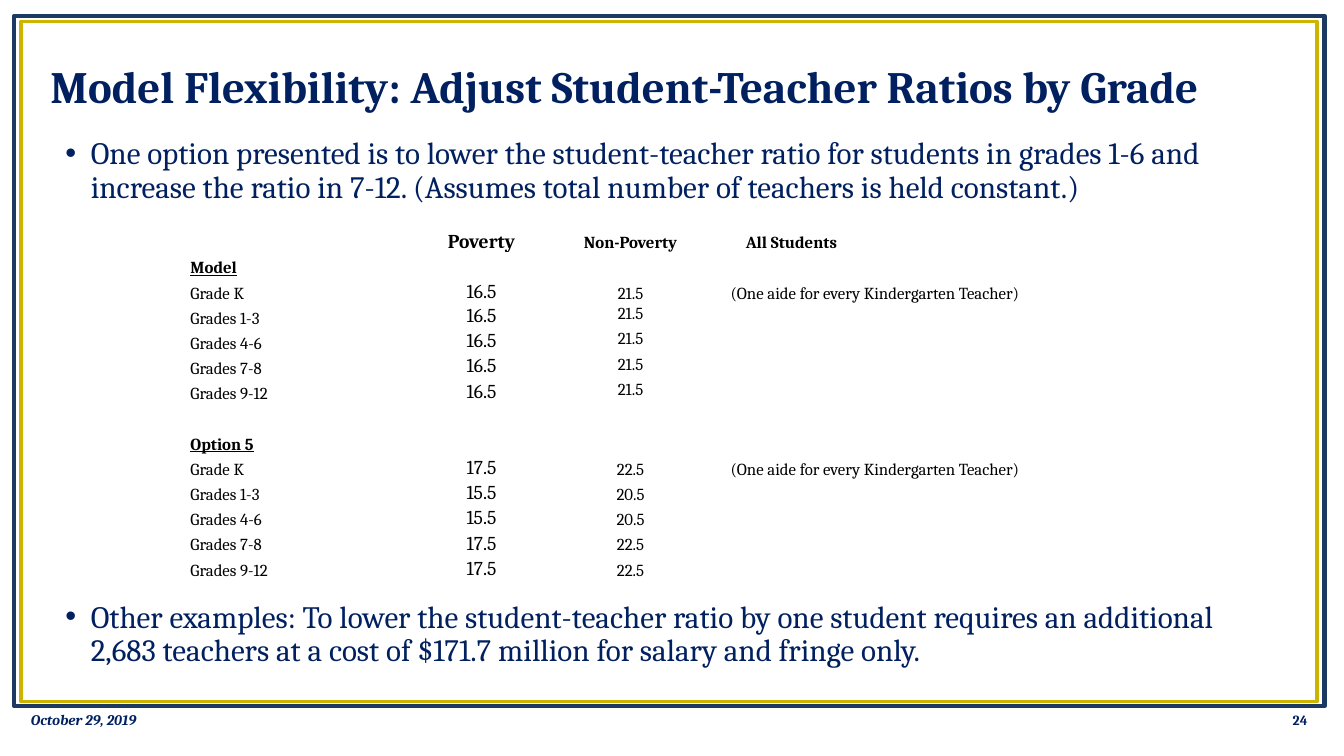
from dataclasses import dataclass

from lxml.etree import SubElement
from pptx import Presentation
from pptx.dml.color import RGBColor
from pptx.enum.shapes import MSO_SHAPE
from pptx.enum.text import MSO_ANCHOR, PP_ALIGN
from pptx.oxml.ns import qn
from pptx.util import Cm, Pt


@dataclass(frozen=True)
class Theme:
    font: str = "Cambria"
    navy: RGBColor = RGBColor(0x00, 0x20, 0x60)
    black: RGBColor = RGBColor(0x00, 0x00, 0x00)
    frame_blue: RGBColor = RGBColor(0x1C, 0x39, 0x61)
    frame_gold: RGBColor = RGBColor(0xCC, 0xB4, 0x00)
    title: float = 32
    body: float = 22.2
    poverty: float = 14
    cell: float = 12
    date: float = 10.5
    number: float = 10


def apply(target, values):
    for name, value in values.items():
        setattr(target, name, value)


class SlideBuilder:
    def __init__(self, page, theme):
        self.page = page
        self.theme = theme

    def add_span(self, para, text, size, color, layout=None, **style):
        apply(para, layout or {})
        span = para.add_run()
        span.text = text
        apply(span.font, {"name": self.theme.font, "size": Pt(size), **style})
        span.font.color.rgb = color

    def frame(self, left, top, width, height, color, weight):
        box = self.page.shapes.add_shape(
            MSO_SHAPE.RECTANGLE, Cm(left), Cm(top), Cm(width), Cm(height))
        box.shadow.inherit = False
        box.fill.background()
        box.line.color.rgb = color
        box.line.width = Pt(weight)

    def text_box(self, left, top, width, height, anchor=MSO_ANCHOR.MIDDLE):
        box = self.page.shapes.add_textbox(Cm(left), Cm(top), Cm(width), Cm(height))
        apply(box.text_frame, {"word_wrap": True, "vertical_anchor": anchor})
        return box.text_frame

    def line(self, area, text, size, layout=None, **style):
        self.add_span(self.text_box(*area).paragraphs[0], text, size,
                      self.theme.navy, layout, bold=True, **style)

    def bullets(self, area, texts, gap):
        frame = self.text_box(*area, anchor=MSO_ANCHOR.TOP)
        for index, text in enumerate(texts):
            para = frame.add_paragraph() if index else frame.paragraphs[0]
            settings = para._p.get_or_add_pPr()
            settings.set("marL", str(Cm(0.64)))
            settings.set("indent", str(-Cm(0.64)))
            SubElement(settings, qn("a:buFont"), typeface="Arial")
            SubElement(settings, qn("a:buChar"), char="•")
            layout = {"line_spacing": 0.9, "space_before": Pt(gap if index else 0)}
            self.add_span(para, text, self.theme.body, self.theme.navy, layout)

    def table(self, area, widths, rows, merged, top_cells):
        left, top, width, height = map(Cm, area)
        grid = self.page.shapes.add_table(
            len(rows), len(widths), left, top, width, height).table
        apply(grid, {"first_row": False, "horz_banding": False})
        for column, column_width in zip(grid.columns, widths):
            column.width = Cm(column_width)
        for r, row in enumerate(rows):
            for c in range(len(widths)):
                cell = grid.cell(r, c)
                cell.fill.background()
                anchor = MSO_ANCHOR.TOP if (r, c) in top_cells else MSO_ANCHOR.BOTTOM
                apply(cell, {"margin_left": Cm(0.18), "margin_right": Cm(0.18),
                             "margin_top": 0, "margin_bottom": 0,
                             "vertical_anchor": anchor})
                para = cell.text_frame.paragraphs[0]
                text = row[c] if c < len(row) else ""
                if not text:
                    SubElement(para._p, qn("a:endParaRPr"), sz=str(self.theme.cell * 100))
                    continue
                section = len(row) == 1
                centred = r == 0 or c in (1, 2)
                layout = {"line_spacing": 1.07,
                          "alignment": PP_ALIGN.CENTER if centred else PP_ALIGN.LEFT}
                size = self.theme.poverty if c == 1 else self.theme.cell
                self.add_span(para, text, size, self.theme.black, layout,
                              bold=r == 0 or section, underline=section)
        for r, first, last in merged:
            grid.cell(r, first).merge(grid.cell(r, last))


GRADES = ["Grade K", "Grades 1-3", "Grades 4-6", "Grades 7-8", "Grades 9-12"]
AIDE = "(One aide for every Kindergarten Teacher)"
MODEL = [("16.5", "21.5")] * 5
OPTION = [("17.5", "22.5"), ("15.5", "20.5"), ("15.5", "20.5"),
          ("17.5", "22.5"), ("17.5", "22.5")]


def section_rows(name, ratios):
    rows = [[grade, *pair] for grade, pair in zip(GRADES, ratios)]
    rows[0] += ["", AIDE]
    return [[name], *rows]


def main():
    deck = Presentation()
    apply(deck, {"slide_width": Cm(33.87), "slide_height": Cm(19.05)})
    theme = Theme()
    slide = SlideBuilder(deck.slides.add_slide(deck.slide_layouts[6]), theme)

    slide.frame(0.36, 0.4, 33.02, 17.4, theme.frame_blue, 3)
    slide.frame(0.53, 0.54, 32.66, 17.14, theme.frame_gold, 2.5)
    slide.line((1.02, 0.71, 31.93, 3.07),
               "Model Flexibility: Adjust Student-Teacher Ratios by Grade",
               theme.title, {"line_spacing": 0.9})
    slide.bullets((1.4, 3.35, 30.15, 13.79), [
        "One option presented is to lower the student-teacher ratio for students in "
        "grades 1-6 and increase the ratio in 7-12. (Assumes total number of teachers "
        "is held constant.)",
        "Other examples: To lower the student-teacher ratio by one student requires an "
        "additional 2,683 teachers at a cost of $171.7 million for salary and fringe only.",
    ], gap=283)

    rows = [["", "Poverty", "Non-Poverty", "", "All Students"],
            *section_rows("Model", MODEL), [], *section_rows("Option 5", OPTION)]
    slide.table((4.62, 5.74, 24.71, 8.86),
                [5.46, 4.11, 3.4, 0.64, 3.43, 3.96, 3.71], rows,
                merged=[(r, 4, 6) for r, row in enumerate(rows) if AIDE in row],
                top_cells={(r, c) for r in range(3, 7) for c in (1, 2)})

    slide.line((25.58, 17.63, 7.62, 1.02), "24", theme.number,
               {"alignment": PP_ALIGN.RIGHT})
    slide.line((0.53, 17.63, 7.62, 1.02), "October 29, 2019", theme.date, italic=True)
    deck.save("out.pptx")


if __name__ == "__main__":
    main()
